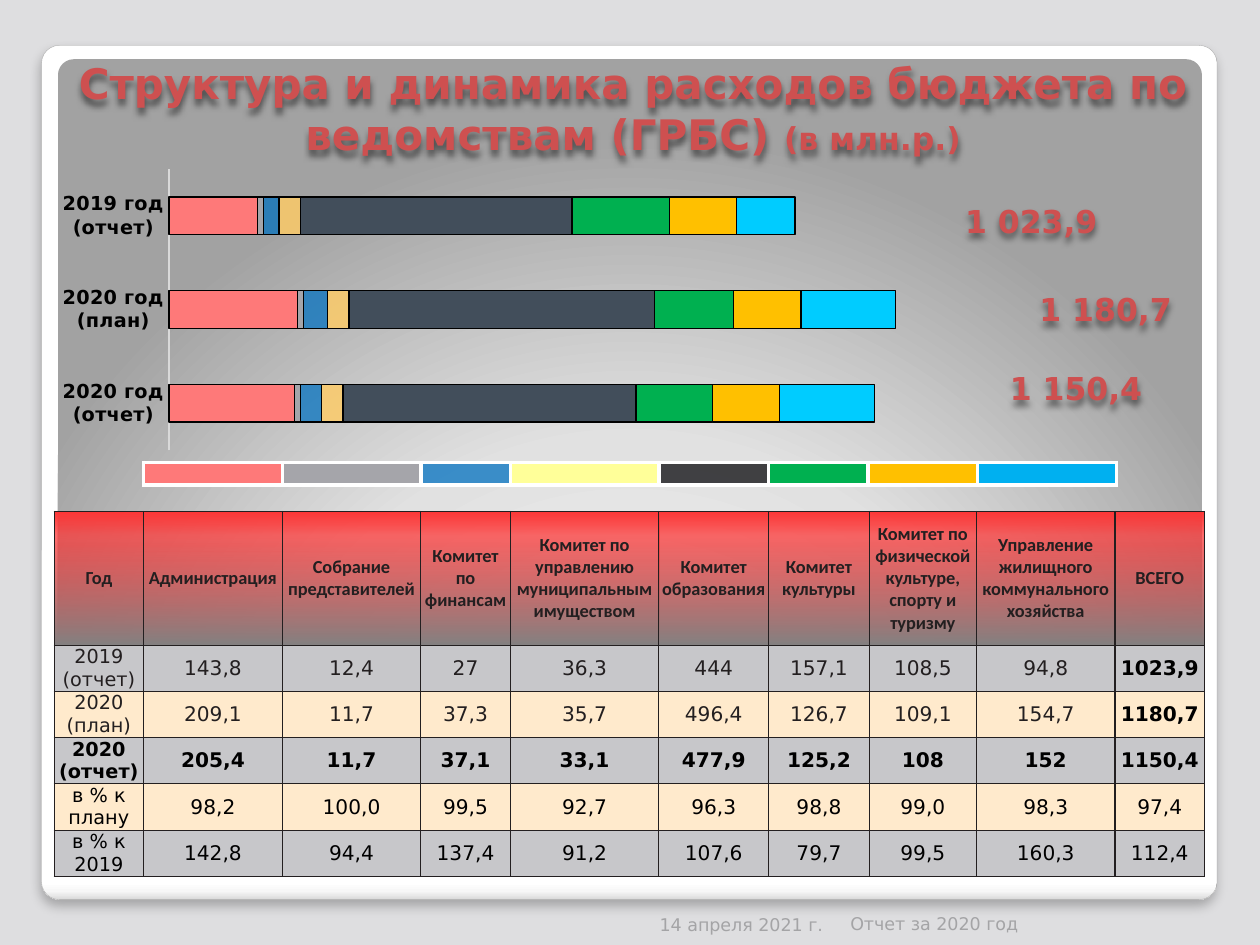
from lxml import etree
from pptx import Presentation
from pptx.chart.data import CategoryChartData
from pptx.dml.color import RGBColor
from pptx.enum.chart import XL_CHART_TYPE, XL_TICK_MARK
from pptx.enum.shapes import MSO_SHAPE
from pptx.enum.text import MSO_ANCHOR, MSO_AUTO_SIZE, PP_ALIGN
from pptx.oxml.ns import qn
from pptx.util import Inches, Pt

LEFT, CENTER, RIGHT = PP_ALIGN.LEFT, PP_ALIGN.CENTER, PP_ALIGN.RIGHT
BOTTOM, MIDDLE = MSO_ANCHOR.BOTTOM, MSO_ANCHOR.MIDDLE
ROUND_RECT = MSO_SHAPE.ROUNDED_RECTANGLE
FONT, HEAD_FONT = "DejaVu Sans", "Calibri"

COLORS = {
    "back": "DEDEE0", "white": "FFFFFF", "black": "000000", "edge": "A4A4A4",
    "accent": "CE5050", "footer": "A4A4A6", "ink": "231F20", "axis": "D9D9D9",
    "band": "C7C7CA", "cream": "FFEACC",
}
# Gradient stops: position %, colour, opacity %
CARD = [(0, "FFFFFF", 100), (98, "FFFFFF", 100), (99, "F7F7F7", 100), (100, "DADADA", 100)]
PANEL = [(0, "FFFFFF", 100), (55, "E1E1E1", 100), (100, "A2A2A2", 100)]
HEADER = [(0, "828282", 100), (82, "FF3434", 72), (100, "FE3737", 100)]

YEARS = ["2020 год (отчет)", "2020 год (план)", "2019 год (отчет)"]
# Values by year, colour, opacity %
SERIES = [
    ((41, 42, 29), "FE7979", 100), ((2, 2, 2), "A5A5AA", 100),
    ((7, 8, 5), "0070C0", 73), ((7, 7, 7), "FFCC66", 82),
    ((96, 100, 89), "424E5B", 100), ((25, 26, 32), "00B050", 100),
    ((22, 22, 22), "FFC000", 100), ((31, 31, 19), "00CCFF", 100),
]
KEY = [("FE7979", 100), ("A5A5AA", 100), ("0070C0", 74), ("FFFF99", 100),
       ("363639", 94), ("00B050", 100), ("FFC000", 100), ("00B0F0", 100)]
KEY_COLS = [1.1, 1.1, 0.71, 1.18, 0.87, 0.79, 0.87, 1.1]
TABLE_COLS = [0.71, 1.1, 1.1, 0.71, 1.18, 0.87, 0.8, 0.85, 1.1, 0.71]
HEADINGS = [
    "Год", "Администрация", "Собрание представителей", "Комитет по финансам",
    "Комитет по управлению муниципальным имуществом", "Комитет образования",
    "Комитет культуры", "Комитет по физической культуре, спорту и туризму",
    "Управление жилищного коммунального хозяйства", "ВСЕГО",
]
ROWS = [
    ["2019 (отчет)", "143,8", "12,4", "27", "36,3", "444", "157,1", "108,5", "94,8", "1023,9"],
    ["2020 (план)", "209,1", "11,7", "37,3", "35,7", "496,4", "126,7", "109,1", "154,7", "1180,7"],
    ["2020 (отчет)", "205,4", "11,7", "37,1", "33,1", "477,9", "125,2", "108", "152", "1150,4"],
    ["в % к плану", "98,2", "100,0", "99,5", "92,7", "96,3", "98,8", "99,0", "98,3", "97,4"],
    ["в % к 2019", "142,8", "94,4", "137,4", "91,2", "107,6", "79,7", "99,5", "160,3", "112,4"],
]


def rgb(color):
    return RGBColor.from_string(color)


def sub(parent, tag, **attrs):
    return etree.SubElement(parent, qn(tag), {k: str(v) for k, v in attrs.items()})


def add_color(parent, color, opacity=100):
    clr = sub(parent, "a:srgbClr", val=color)
    if opacity < 100:
        sub(clr, "a:alpha", val=opacity * 1000)


def solid(fill, parent, color, opacity=100):
    fill.solid()
    fill.fore_color.rgb = rgb(color)
    if opacity < 100:
        sub(parent.find(qn("a:solidFill"))[0], "a:alpha", val=opacity * 1000)


def gradient(fill, parent, stops, angle=None, center=None):
    """Linear at an angle, or round about center (left, top, right, bottom %)."""
    fill.gradient()
    grad = parent.find(qn("a:gradFill"))
    for child in list(grad):
        grad.remove(child)
    gs_list = sub(grad, "a:gsLst")
    for pos, color, opacity in stops:
        add_color(sub(gs_list, "a:gs", pos=pos * 1000), color, opacity)
    if center:
        rect = {side: v * 1000 for side, v in zip("ltrb", center)}
        sub(sub(grad, "a:path", path="circle"), "a:fillToRect", **rect)
    else:
        sub(grad, "a:lin", ang=angle * 60000, scaled=0)


def add_shadow(sp, opacity, blur, dist):
    sp.shadow.inherit = False
    effects = sp._element.spPr.find(qn("a:effectLst"))
    shadow = sub(effects, "a:outerShdw", blurRad=Pt(blur), dist=Pt(dist),
                 dir=90 * 60000, algn="t", rotWithShape=0)
    add_color(shadow, COLORS["black"], opacity)


def add_run(p, text, size, color, bold=False, font=FONT):
    r = p.add_run()
    r.text = text
    r.font.size, r.font.bold, r.font.name = Pt(size), bold, font
    r.font.color.rgb = rgb(color)


def add_panel(s, x, y, w, h):
    sp = s.shapes.add_shape(ROUND_RECT, Inches(x), Inches(y), Inches(w), Inches(h))
    sp.adjustments[0] = 0.021
    sp.shadow.inherit = False
    sp.line.fill.background()
    return sp


def add_backdrop(s):
    card = add_panel(s, 0.33, 0.36, 9.33, 6.78)
    gradient(card.fill, card._element.spPr, CARD, angle=90)
    card.line.color.rgb = rgb(COLORS["edge"])
    card.line.width = Pt(0.16)
    add_shadow(card, 25, 6, 4)
    panel = add_panel(s, 0.46, 0.47, 9.08, 6)
    gradient(panel.fill, panel._element.spPr, PANEL, center=(50, 175, 50, -75))


def add_title(s):
    sp = s.shapes.title
    s.shapes._spTree.append(sp._element)  # bring in front of the backdrop
    sp.left, sp.top, sp.width, sp.height = (Inches(v) for v in (0.51, 0.52, 9.03, 0.79))
    add_shadow(sp, 50, 4, 3)
    tf = sp.text_frame
    tf.auto_size, tf.vertical_anchor = MSO_AUTO_SIZE.NONE, BOTTOM
    p = tf.paragraphs[0]
    p.alignment = CENTER
    add_run(p, "Структура и динамика расходов бюджета по ведомствам (ГРБС) ",
            24, COLORS["accent"], True)
    add_run(p, "(в млн.р.)", 18, COLORS["accent"], True)


def add_label(s, x, y, w, text, align, size, color, bold=False):
    sp = s.shapes.add_textbox(Inches(x), Inches(y), Inches(w), Inches(0.4))
    tf = sp.text_frame
    tf.word_wrap, tf.vertical_anchor = True, BOTTOM
    p = tf.paragraphs[0]
    p.alignment = align
    add_run(p, text, size, color, bold)
    return sp


def add_spending_chart(s):
    data = CategoryChartData()
    data.categories = YEARS
    for i, (values, _, _) in enumerate(SERIES, 1):
        data.add_series(f"Series {i}", values)
    chart = s.shapes.add_chart(XL_CHART_TYPE.BAR_STACKED, Inches(0.1), Inches(1.23),
                               Inches(9.06), Inches(3.23), data).chart
    chart.has_legend = chart.has_title = False
    chart.font.size, chart.font.name = Pt(10), FONT
    chart.font.color.rgb = rgb(COLORS["black"])
    plot = chart.plots[0]
    plot.gap_width, plot.overlap, plot.vary_by_categories = 150, 100, False
    for ser, (_, color, opacity) in zip(plot.series, SERIES):
        solid(ser.format.fill, ser._element.spPr, color, opacity)
        ser.format.line.color.rgb = rgb(COLORS["black"])
        ser.format.line.width = Pt(0.75)
    axis = chart.category_axis
    axis.major_tick_mark = axis.minor_tick_mark = XL_TICK_MARK.NONE
    axis.tick_labels.offset = 0
    font = axis.tick_labels.font
    font.size, font.bold, font.name = Pt(11), True, FONT
    font.color.rgb = rgb(COLORS["black"])
    axis.format.line.color.rgb = rgb(COLORS["axis"])
    axis.format.line.width = Pt(0.75)
    values = chart.value_axis
    values.visible = values.has_major_gridlines = False
    values.minimum_scale, values.maximum_scale = 0, 280
    area = chart._chartSpace.chart.plotArea
    for old in area.findall(qn("c:layout")):
        area.remove(old)
    layout = etree.Element(qn("c:layout"))
    area.insert(0, layout)
    manual = sub(layout, "c:manualLayout")
    for tag, val in (("layoutTarget", "inner"), ("xMode", "edge"), ("yMode", "edge"),
                     ("x", 0.137), ("y", 0.034), ("w", 0.749), ("h", 0.692)):
        sub(manual, f"c:{tag}", val=val)


def set_borders(cell, color, width):
    tc_pr = cell._tc.get_or_add_tcPr()
    for i, side in enumerate("LRTB"):
        ln = etree.Element(qn(f"a:ln{side}"), w=str(Pt(width)))
        add_color(sub(ln, "a:solidFill"), color)
        tc_pr.insert(i, ln)


def add_grid(s, x, y, cols, rows):
    table = s.shapes.add_table(len(rows), len(cols), Inches(x), Inches(y),
                               Inches(sum(cols)), Inches(sum(rows))).table
    table.first_row = table.horz_banding = False
    for col, w in zip(table.columns, cols):
        col.width = Inches(w)
    for row, h in zip(table.rows, rows):
        row.height = Inches(h)
    for cell in table.iter_cells():
        cell.margin_left = cell.margin_right = Inches(0.01)
        cell.margin_top = cell.margin_bottom = 0
        cell.vertical_anchor = MIDDLE
    return table


def add_spending_table(s):
    table = add_grid(s, 0.43, 4.06, TABLE_COLS, [1.06] + [0.32] * len(ROWS))
    for i, row in enumerate([HEADINGS] + ROWS):
        for j, text in enumerate(row):
            cell = table.cell(i, j)
            p = cell.text_frame.paragraphs[0]
            p.alignment = CENTER
            if i == 0:
                gradient(cell.fill, cell._tc.tcPr, HEADER, angle=270)
                add_run(p, text, 10.5, COLORS["ink"], True, HEAD_FONT)
            else:
                total = j == len(row) - 1
                solid(cell.fill, cell._tc.tcPr, COLORS["band" if i % 2 else "cream"])
                add_run(p, text, 11.5 if j else 11,
                        COLORS["black" if i > 2 or total else "ink"],
                        i == 3 or (total and i < 3))
            set_borders(cell, COLORS["ink"], 0.75)


def add_color_key(s):
    table = add_grid(s, 1.14, 3.67, KEY_COLS, [0.18])
    for cell, (color, opacity) in zip(table.iter_cells(), KEY):
        solid(cell.fill, cell._tc.tcPr, color, opacity)
        set_borders(cell, COLORS["white"], 2.25)
        sub(cell.text_frame.paragraphs[0]._p, "a:endParaRPr", sz=800)


def main():
    prs = Presentation()
    prs.slide_width, prs.slide_height = Inches(10), Inches(7.5)
    s = prs.slides.add_slide(prs.slide_layouts[5])
    s.background.fill.solid()
    s.background.fill.fore_color.rgb = rgb(COLORS["back"])
    add_backdrop(s)
    add_title(s)
    add_label(s, 4.13, 7.07, 2.5, "14 апреля 2021 г.", RIGHT, 10, COLORS["footer"])
    add_label(s, 6.65, 7.06, 2.5, "Отчет за 2020 год", LEFT, 10, COLORS["footer"])
    add_spending_chart(s)
    for x, y, w, total in ((8.14, 2.25, 1.27, "1 180,7"), (7.83, 2.88, 1.42, "1 150,4"),
                           (7.52, 1.55, 1.33, "1 023,9")):
        sp = add_label(s, x, y, w, total, CENTER, 18, COLORS["accent"], bold=True)
        add_shadow(sp, 50, 4, 3)
    add_spending_table(s)
    add_color_key(s)
    prs.save("out.pptx")


if __name__ == "__main__":
    main()
